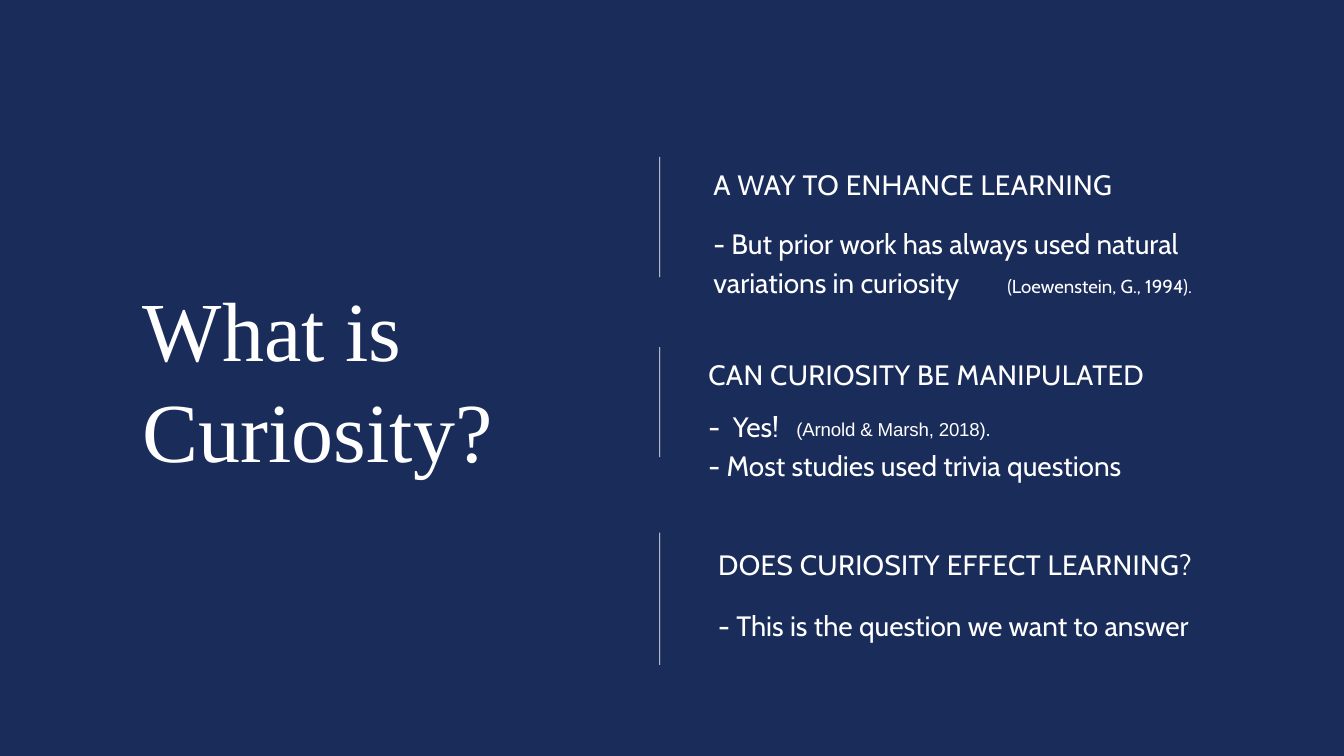
from pptx import Presentation
from pptx.dml.color import RGBColor
from pptx.enum.shapes import MSO_SHAPE
from pptx.enum.text import MSO_ANCHOR, MSO_AUTO_SIZE, PP_ALIGN
from pptx.util import Emu, Pt

PX = 9525
NAVY = RGBColor(0x1A, 0x2C, 0x5A)
WHITE = RGBColor(0xFF, 0xFF, 0xFF)

TITLE = dict(font="Times New Roman", size=90, leading=108)
BODY = dict(font="Cabin", size=30, leading=42)
HEADING = dict(BODY, tracking=40)
CITATION = dict(font="Cabin", size=20, leading=30.8, align=PP_ALIGN.CENTER)

RULE_X = 942
# Section box (left, top, width, height), text indent, heading and body offsets
SECTIONS = [
    ((RULE_X, 224, 871, 172), 77, 8, 91, "A WAY TO ENHANCE LEARNING",
     ["- But prior work has always used natural variations in curiosity"]),
    ((RULE_X, 496, 798, 157), 70, 7, 81, "CAN CURIOSITY BE MANIPULATED",
     ["-  Yes!", "- Most studies used trivia questions"]),
    ((RULE_X, 761, 960, 189), 84, 13, 101, "DOES CURIOSITY EFFECT LEARNING?",
     ["- This is the question we want to answer"]),
]
CITATIONS = [
    ((1410, 383, 328, 37), "(Loewenstein, G., 1994). ", CITATION),
    ((1018, 588, 517, 80), "(Arnold & Marsh, 2018).",
     dict(CITATION, font="Arial", tracking=-20)),
]


def px(*lengths):
    return [Emu(length * PX) for length in lengths]


def fill_text(shape, lines, style):
    frame = shape.text_frame
    settings = dict(word_wrap=True, auto_size=MSO_AUTO_SIZE.SHAPE_TO_FIT_TEXT,
                    vertical_anchor=MSO_ANCHOR.TOP, margin_left=0,
                    margin_top=0, margin_right=0, margin_bottom=0)
    for name, value in settings.items():
        setattr(frame, name, value)
    for index, line in enumerate(lines):
        para = frame.add_paragraph() if index else frame.paragraphs[0]
        para.alignment = style.get("align", PP_ALIGN.LEFT)
        para.line_spacing = Pt(style["leading"])
        para.space_before = para.space_after = Pt(0)
        span = para.add_run()
        span.text = line
        span.font.name = style["font"]
        span.font.size = Pt(style["size"])
        span.font.color.rgb = WHITE
        if "tracking" in style:
            span.font._element.set("spc", str(style["tracking"]))


def add_text(shapes, box, lines, style):
    fill_text(shapes.add_textbox(*px(*box)), lines, style)


def add_title(page, box):
    title = page.shapes.title
    title.left, title.top, title.width, title.height = px(*box)
    fill_text(title, ["What is Curiosity?"], TITLE)


def add_section(page, box, indent, heading_y, body_y, heading, lines):
    """Group a thin vertical rule with the heading and body to its right."""
    left, top, width, height = box
    shapes = page.shapes.add_group_shape().shapes
    rule = shapes.add_shape(MSO_SHAPE.RECTANGLE, *px(left, top, 1, height))
    rule.shadow.inherit = False
    rule.fill.solid()
    rule.fill.fore_color.rgb = WHITE
    rule.line.fill.background()
    text_left, text_width = left + indent, width - indent
    add_text(shapes, (text_left, top + body_y, text_width, 56 * len(lines)),
             lines, BODY)
    add_text(shapes, (text_left, top + heading_y, text_width, 53),
             [heading], HEADING)


def main():
    deck = Presentation()
    deck.slide_width, deck.slide_height = px(1920, 1080)
    page = deck.slides.add_slide(deck.slide_layouts[5])
    page.background.fill.solid()
    page.background.fill.fore_color.rgb = NAVY

    add_title(page, (204, 396, 619, 288))
    for section in SECTIONS:
        add_section(page, *section)
    for box, text, style in CITATIONS:
        add_text(page.shapes, box, [text], style)
    deck.save("out.pptx")


if __name__ == "__main__":
    main()
